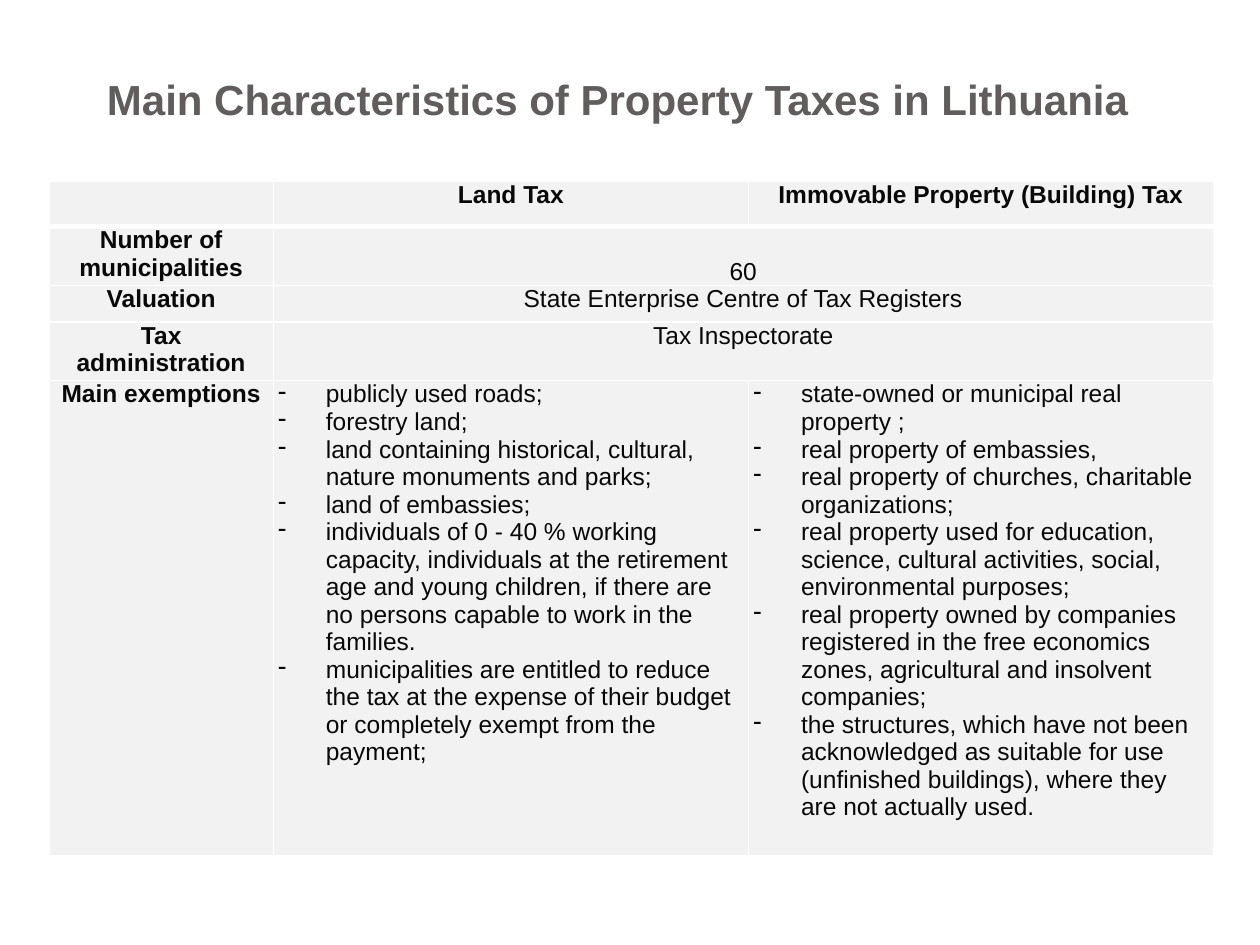
"""Build a slide with a table of the main property taxes in Lithuania."""
import pptx
import pptx.dml.color
import pptx.enum.text
import pptx.oxml
import pptx.oxml.ns
import pptx.util

Cm = pptx.util.Cm
Align = pptx.enum.text.PP_ALIGN
Anchor = pptx.enum.text.MSO_ANCHOR

HEAD = ["", "Land Tax", "Immovable Property (Building) Tax"]
FACTS = [
    ("Number of municipalities", "60", Anchor.BOTTOM),
    ("Valuation", "State Enterprise Centre of Tax Registers", Anchor.TOP),
    ("Tax administration", "Tax Inspectorate", Anchor.TOP),
]
LAND = [
    "publicly used roads;",
    "forestry land;",
    "land containing historical, cultural, nature monuments and parks;",
    "land of embassies;",
    "individuals of 0 - 40 % working capacity, individuals at the retirement age "
    "and young children, if there are no persons capable to work in the families.",
    "municipalities are entitled to reduce the tax at the expense of their budget "
    "or completely exempt from the payment;",
]
BUILD = [
    "state-owned or municipal real property ;",
    "real property of embassies,",
    "real property of churches, charitable organizations;",
    "real property used for education, science, cultural activities, social, "
    "environmental purposes;",
    "real property owned by companies registered in the free economics zones, "
    "agricultural and insolvent companies;",
    "the structures, which have not been acknowledged as suitable for use "
    "(unfinished buildings), where they are not actually used.",
]
COLS = [4.52, 9.58, 9.37]
ROWS = [0.91, 1.12, 0.73, 1.12, 9.58]


def paint(hue):
    return pptx.dml.color.RGBColor.from_string(hue)


def write(frame, lines, size=14, hue="080808", font="Arial", bold=False,
          align=Align.CENTER, mark=None):
    frame.word_wrap = True
    for i, line in enumerate(lines):
        para = frame.paragraphs[0] if i == 0 else frame.add_paragraph()
        para.alignment = align
        run = para.add_run()
        run.text = line
        run.font.size = pptx.util.Pt(size)
        run.font.name = font
        run.font.bold = bold
        run.font.color.rgb = paint(hue)
        if mark:
            props = para._p.get_or_add_pPr()
            props.set("marL", str(Cm(0.96)))
            props.set("indent", str(Cm(-0.96)))
            props.append(pptx.oxml.parse_xml(
                f'<a:buChar {pptx.oxml.ns.nsdecls("a")} char="{mark}"/>'))


class Deck:
    def __init__(self, slide):
        self.slide = slide
        self.fill = "F2F2F2"
        self.edge = "FFFFFF"
        self.tint = "605D5C"

    def title(self, text, left, top, width, height):
        box = self.slide.shapes.add_textbox(Cm(left), Cm(top), Cm(width), Cm(height))
        box.text_frame.vertical_anchor = Anchor.MIDDLE
        write(box.text_frame, [text], size=24, hue=self.tint, bold=True)

    def grid(self, left, top, cols, rows):
        table = self.slide.shapes.add_table(
            len(rows), len(cols), Cm(left), Cm(top), Cm(sum(cols)), Cm(sum(rows))).table
        for col, width in zip(table.columns, cols):
            col.width = Cm(width)
        for i, (row, height) in enumerate(zip(table.rows, rows)):
            row.height = Cm(height)
            for cell in row.cells:
                self.dress(cell, top=3 if i == 1 else 1, base=3 if i == 0 else 1)
        return table

    def dress(self, cell, top, base):
        cell.margin_left = cell.margin_right = Cm(0.1)
        cell.margin_top = cell.margin_bottom = 0
        cell.fill.solid()
        cell.fill.fore_color.rgb = paint(self.fill)
        props = cell._tc.get_or_add_tcPr()
        for i, (side, width) in enumerate(zip("LRTB", (1, 1, top, base))):
            props.insert(i, pptx.oxml.parse_xml(
                f'<a:ln{side} {pptx.oxml.ns.nsdecls("a")} w="{pptx.util.Pt(width)}">'
                f'<a:solidFill><a:srgbClr val="{self.edge}"/></a:solidFill></a:ln{side}>'))


def main():
    show = pptx.Presentation()
    show.slide_width, show.slide_height = Cm(25.4), Cm(19.05)
    deck = Deck(show.slides.add_slide(show.slide_layouts[6]))
    deck.title("Main Characteristics of Property Taxes in Lithuania ",
               0.91, 1.3, 23.32, 1.37)
    table = deck.grid(0.99, 3.66, COLS, ROWS)
    for col, name in enumerate(HEAD):
        if name:
            write(table.cell(0, col).text_frame, [name], bold=True)
    for row, (name, fact, anchor) in enumerate(FACTS, 1):
        write(table.cell(row, 0).text_frame, [name], bold=True)
        cell = table.cell(row, 1)
        cell.merge(table.cell(row, 2))
        cell.vertical_anchor = anchor
        write(cell.text_frame, [fact])
    last = len(ROWS) - 1
    write(table.cell(last, 0).text_frame, ["Main exemptions"], bold=True)
    for col, items in enumerate((LAND, BUILD), 1):
        write(table.cell(last, col).text_frame, items, align=Align.LEFT, mark="-")
    show.save("out.pptx")


if __name__ == "__main__":
    main()
